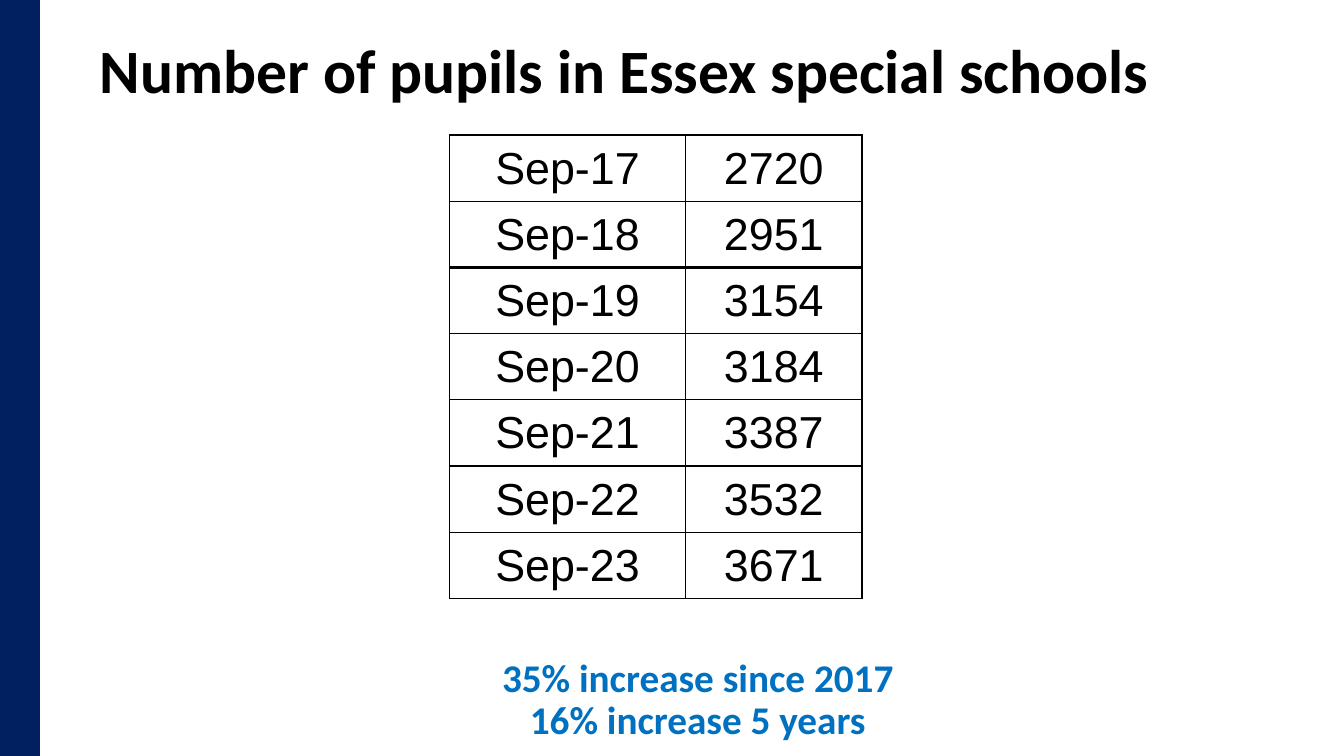
import pptx
import pptx.dml.color
import pptx.enum.shapes
import pptx.enum.text
import pptx.oxml
import pptx.util
from pptx.util import Inches

COLORS = {"navy": "002060", "blue": "0070C0", "black": "000000"}
PUPILS = [
    ("Sep-17", 2720),
    ("Sep-18", 2951),
    ("Sep-19", 3154),
    ("Sep-20", 3184),
    ("Sep-21", 3387),
    ("Sep-22", 3532),
    ("Sep-23", 3671),
]


def rgb(name):
    return pptx.dml.color.RGBColor.from_string(COLORS[name])


def write(tf, text, size=32, font="Arial", color="black", bold=False,
          align="LEFT", spacing=1.0, before=0):
    """Fill a text frame with one paragraph; newlines become line breaks."""
    p = tf.paragraphs[0]
    p.alignment = getattr(pptx.enum.text.PP_ALIGN, align)
    p.line_spacing = spacing
    p.space_before = pptx.util.Pt(before)
    for i, line in enumerate(text.split("\n")):
        if i:
            p.add_line_break()
        r = p.add_run()
        r.text = line
        r.font.name = font
        r.font.size = pptx.util.Pt(size)
        r.font.bold = bold
        r.font.color.rgb = rgb(color)


class SlideBuilder:
    def __init__(self, s):
        self.s = s
        self.middle = pptx.enum.text.MSO_ANCHOR.MIDDLE

    def text(self, box, text, **style):
        tf = self.s.shapes.add_textbox(*map(Inches, box)).text_frame
        tf.word_wrap = True
        tf.vertical_anchor = self.middle
        write(tf, text, font="Calibri", bold=True, spacing=0.9, **style)

    def bar(self, box, color):
        sp = self.s.shapes.add_shape(
            pptx.enum.shapes.MSO_SHAPE.RECTANGLE, *map(Inches, box))
        sp.shadow.inherit = False
        sp.fill.solid()
        sp.fill.fore_color.rgb = rgb(color)
        sp.line.color.rgb = rgb(color)
        sp.line.width = pptx.util.Pt(1)

    def borders(self, cell, **widths):
        # Borders must precede the fill in the cell properties
        tc_pr = cell._tc.get_or_add_tcPr()
        for i, side in enumerate("LRTB"):
            width = pptx.util.Pt(widths.get(side, 1))
            tc_pr.insert(i, pptx.oxml.parse_xml(
                '<a:ln%s xmlns:a="http://schemas.openxmlformats.org/drawingml/2006/main"'
                ' w="%d"><a:solidFill><a:srgbClr val="%s"/></a:solidFill></a:ln%s>'
                % (side, width, COLORS["black"], side)))

    def table(self, left, top, col_widths, row_height, rows, thick_after):
        frame = self.s.shapes.add_table(
            len(rows), len(col_widths), Inches(left), Inches(top),
            Inches(sum(col_widths)), Inches(row_height * len(rows)))
        table = frame.table
        table.first_row = table.horz_banding = False
        for col, width in zip(table.columns, col_widths):
            col.width = Inches(width)
        for i, values in enumerate(rows):
            table.rows[i].height = Inches(row_height)
            for j, value in enumerate(values):
                cell = table.cell(i, j)
                cell.fill.background()
                cell.vertical_anchor = self.middle
                cell.margin_left = cell.margin_right = cell.margin_top = Inches(0.01)
                cell.margin_bottom = 0
                write(cell.text_frame, str(value), align="CENTER")
                self.borders(cell, T=3 if i == thick_after else 1,
                             B=3 if i == thick_after - 1 else 1)


def main():
    prs = pptx.Presentation()
    prs.slide_width, prs.slide_height = Inches(13.33), Inches(7.5)
    slide = SlideBuilder(prs.slides.add_slide(prs.slide_layouts[6]))

    # Title and summary
    slide.text((0.89, 0, 11.5, 1.45), "Number of pupils in Essex special schools", size=44)
    slide.text((0.89, 6.48, 12.06, 0.95), "35% increase since 2017\n16% increase 5 years",
               size=28, color="blue", align="CENTER", before=10)

    # Pupil numbers, with a thick rule after the second year
    slide.table(4.46, 1.34, (2.34, 1.75), 0.657, PUPILS, thick_after=2)

    # Side bar
    slide.bar((0, 0, 0.39, 7.5), "navy")

    prs.save("out.pptx")


if __name__ == "__main__":
    main()
